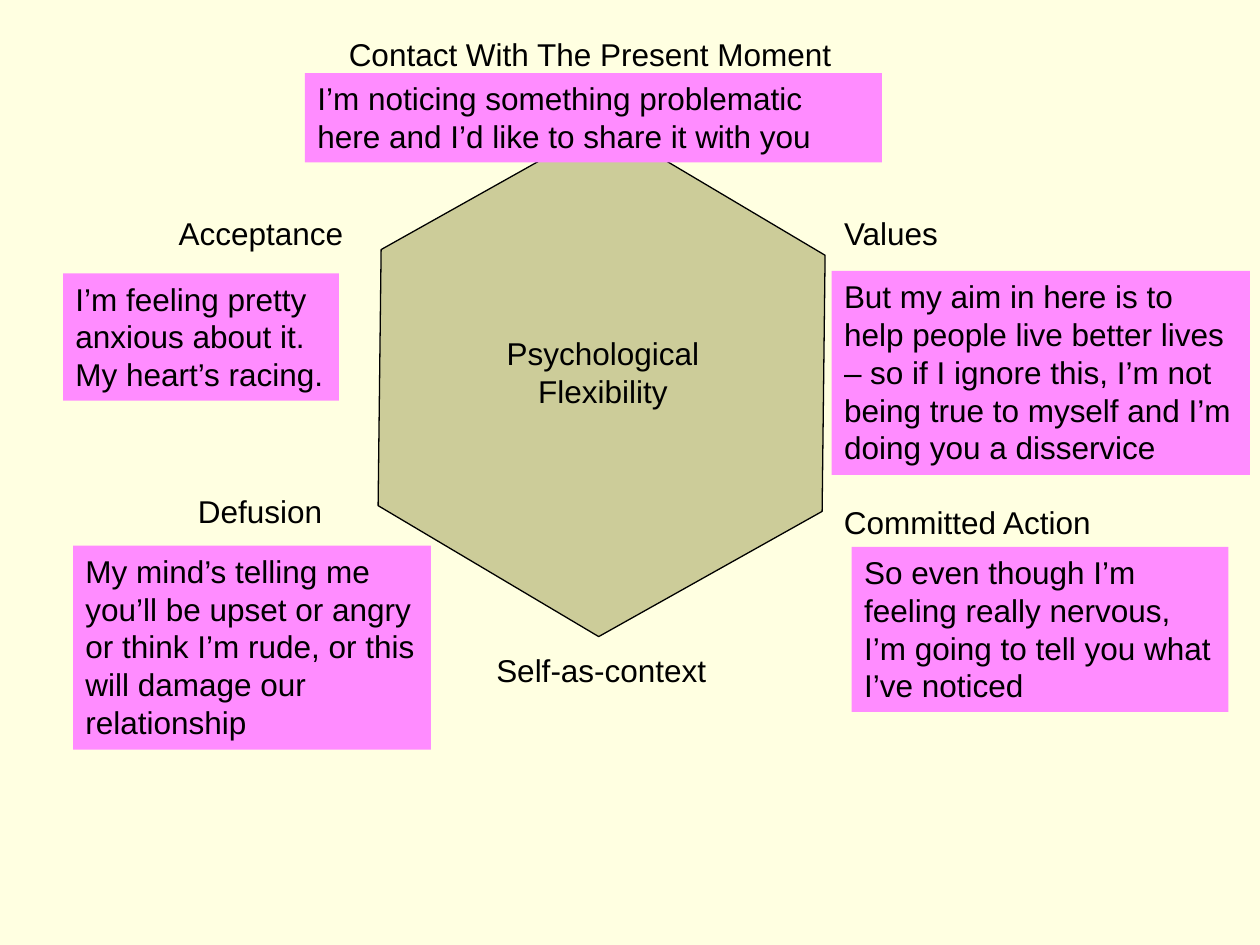
from pptx import Presentation
from pptx import util as u
from pptx.dml.color import RGBColor
from pptx.enum import shapes, text

CREAM = RGBColor(0xFF, 0xFF, 0xE1)
KHAKI = RGBColor(0xCC, 0xCC, 0x99)
PINK = RGBColor(0xFF, 0x8C, 0xFF)
BLACK = RGBColor(0, 0, 0)

# Process names: left, top, width, height in points
LABELS = [
    ("Contact With The Present Moment", (192.24, 16.56, 300.24, 28.8)),
    ("Acceptance", (95.04, 118.8, 113.04, 28.8)),
    ("Values", (475.2, 118.8, 181.44, 28.8)),
    ("Defusion", (106, 277.92, 148.2, 28.8)),
    ("Committed Action", (475.2, 283.68, 198.72, 28.8)),
    ("Self-as-context", (276.48, 368.64, 151.92, 28.8)),
]

# Spoken examples: lines, frame in points, wrapping
EXAMPLES = [
    (["I’m noticing something problematic here and I’d like to share it with you"],
     (174.24, 41.76, 329.76, 51.12), True),
    (["I’m feeling pretty", "anxious about it.", "My heart’s racing."],
     (36, 156.24, 157.68, 72.72), False),
    (["My mind’s telling me", "you’ll be upset or angry", "or think I’m rude, or this",
      "will damage our", "relationship"],
     (41.76, 311.76, 204.48, 116.64), False),
    (["So even though I’m feeling really nervous, I’m going to tell you what",
      "I’ve noticed"],
     (486.72, 312.48, 215.28, 94.32), True),
    (["But my aim in here is to help people live better lives – so if I ignore this, "
      "I’m not being true to myself and I’m doing you a disservice"],
     (475.2, 154.8, 239.04, 116.64), True),
]


def points(frame):
    return [u.Pt(value) for value in frame]


def write(box, lines, align=text.PP_ALIGN.LEFT, wrap=True, size=18):
    frame = box.text_frame
    frame.word_wrap = wrap
    frame.vertical_anchor = text.MSO_ANCHOR.TOP
    for index, line in enumerate(lines):
        para = frame.add_paragraph() if index else frame.paragraphs[0]
        para.alignment = align
        span = para.add_run()
        span.text = line
        span.font.name = "Arial"
        span.font.size = u.Pt(size)
        span.font.color.rgb = BLACK


def add_label(page, lines, frame, **form):
    write(page.shapes.add_textbox(*points(frame)), lines, **form)


def add_filled(page, kind, frame, fill):
    shape = page.shapes.add_shape(kind, *points(frame))
    shape.shadow.inherit = False
    shape.fill.solid()
    shape.fill.fore_color.rgb = fill
    shape.line.fill.background()
    return shape


def add_hexagon(page):
    hexagon = add_filled(page, shapes.MSO_SHAPE.HEXAGON,
                         (197.28, 90.72, 293.04, 253.44), KHAKI)
    hexagon.adjustments[0] = 0.289
    hexagon.rotation = 30.7
    hexagon.line.color.rgb = BLACK
    hexagon.line.width = u.Pt(0.75)


def main():
    deck = Presentation()
    deck.slide_width, deck.slide_height = u.Pt(720), u.Pt(540)
    page = deck.slides.add_slide(deck.slide_layouts[6])
    page.background.fill.solid()
    page.background.fill.fore_color.rgb = CREAM

    # Central hexagon and its title
    add_hexagon(page)
    add_label(page, ["Psychological", "Flexibility"], (282.24, 187.2, 124.56, 50.4),
              align=text.PP_ALIGN.CENTER, wrap=False)

    # Process names around the hexagon
    for label, frame in LABELS:
        add_label(page, [label], frame)

    # Pink example boxes
    for lines, frame, wrap in EXAMPLES:
        box = add_filled(page, shapes.MSO_SHAPE.RECTANGLE, frame, PINK)
        write(box, lines, wrap=wrap)

    deck.save("out.pptx")


if __name__ == "__main__":
    main()
